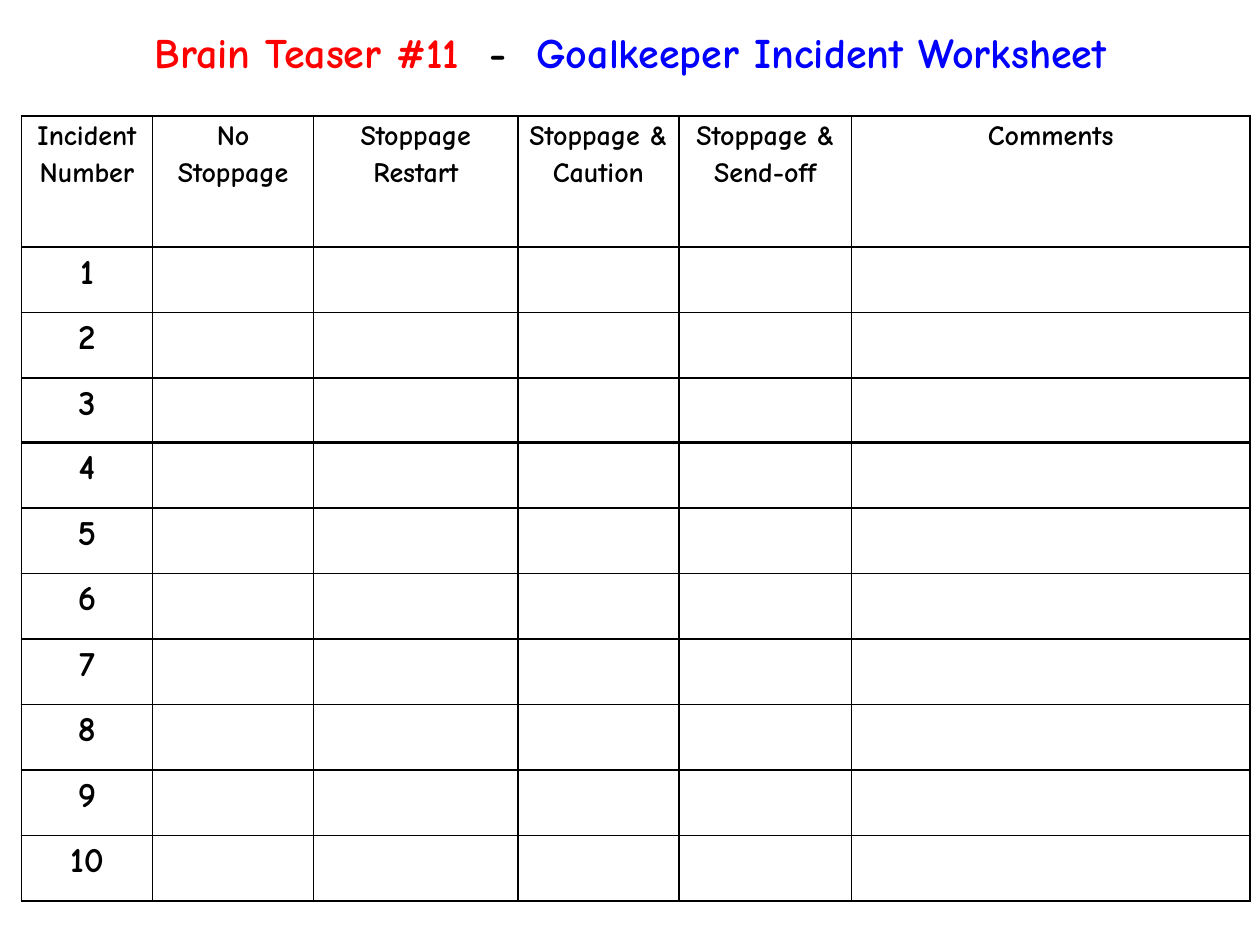
from lxml.etree import SubElement
from pptx import Presentation
from pptx.dml.color import RGBColor
from pptx.enum.text import MSO_ANCHOR, PP_ALIGN
from pptx.oxml.ns import qn
from pptx.util import Inches, Pt

FONT = "Comic Neue"
COLORS = {"black": "000000", "red": "FF0000", "blue": "0000FF"}
COLUMN_WIDTHS = [1.04, 1.28, 1.62, 1.28, 1.37, 3.16]
HEADINGS = ["Incident Number", "No Stoppage", "Stoppage Restart",
            "Stoppage & Caution", "Stoppage & Send-off", "Comments"]
HEADER_HEIGHT = 1.04
ROW_HEIGHT = 0.52


def add_run(paragraph, text, size, color):
    run = paragraph.add_run()
    run.text = text
    run.font.name = FONT
    run.font.size = Pt(size)
    run.font.bold = True
    run.font.color.rgb = RGBColor.from_string(COLORS[color])


def add_title(slide, left, top, width, height):
    title = slide.shapes.title
    title.left, title.top = Inches(left), Inches(top)
    title.width, title.height = Inches(width), Inches(height)
    frame = title.text_frame
    frame.word_wrap = False
    frame.vertical_anchor = MSO_ANCHOR.MIDDLE
    paragraph = frame.paragraphs[0]
    paragraph.alignment = PP_ALIGN.CENTER
    add_run(paragraph, "Brain Teaser #11  ", 24, "red")
    add_run(paragraph, "-  ", 24, "black")
    add_run(paragraph, "Goalkeeper Incident Worksheet", 24, "blue")


def format_cell(cell):
    """Give the cell thin black borders, no fill and tight margins."""
    cell.margin_left = cell.margin_right = Inches(0.07)
    cell.margin_top = cell.margin_bottom = 0
    properties = cell._tc.get_or_add_tcPr()
    for side in ("lnL", "lnR", "lnT", "lnB"):
        line = SubElement(properties, qn(f"a:{side}"), w=str(Pt(1)))
        fill = SubElement(line, qn("a:solidFill"))
        SubElement(fill, qn("a:srgbClr"), val=COLORS["black"])
    cell.fill.background()


def fill_cell(cell, text, size):
    paragraph = cell.text_frame.paragraphs[0]
    paragraph.alignment = PP_ALIGN.CENTER
    paragraph.line_spacing = 1.15
    paragraph.space_after = Pt(10)
    add_run(paragraph, text, size, "black")


def add_incident_table(slide, left, top, numbers, headings=()):
    """Add one row per incident number, below the headings if there are any."""
    heights = ([HEADER_HEIGHT] if headings else []) + [ROW_HEIGHT] * len(numbers)
    table = slide.shapes.add_table(
        len(heights), len(COLUMN_WIDTHS), Inches(left), Inches(top),
        Inches(sum(COLUMN_WIDTHS)), Inches(sum(heights))).table
    table.first_row = table.horz_banding = False
    for column, width in zip(table.columns, COLUMN_WIDTHS):
        column.width = Inches(width)
    for row, height in zip(table.rows, heights):
        row.height = Inches(height)
    for cell in table.iter_cells():
        format_cell(cell)
    for index, heading in enumerate(headings):
        fill_cell(table.cell(0, index), heading, 16)
    first_row = len(heights) - len(numbers)
    for row_index, number in enumerate(numbers, first_row):
        fill_cell(table.cell(row_index, 0), str(number), 20)


def main():
    presentation = Presentation()
    presentation.slide_width, presentation.slide_height = Inches(10), Inches(7.5)
    slide = presentation.slides.add_slide(presentation.slide_layouts[5])

    # Title
    add_title(slide, 0.45, 0.16, 9.11, 0.5)

    # Headings with the first incidents, then one strip per further incident
    add_incident_table(slide, 0.17, 0.92, range(1, 4), HEADINGS)
    for index, number in enumerate(range(4, 11)):
        add_incident_table(slide, 0.17, 3.51 + index * ROW_HEIGHT, [number])

    presentation.save("out.pptx")


if __name__ == "__main__":
    main()
